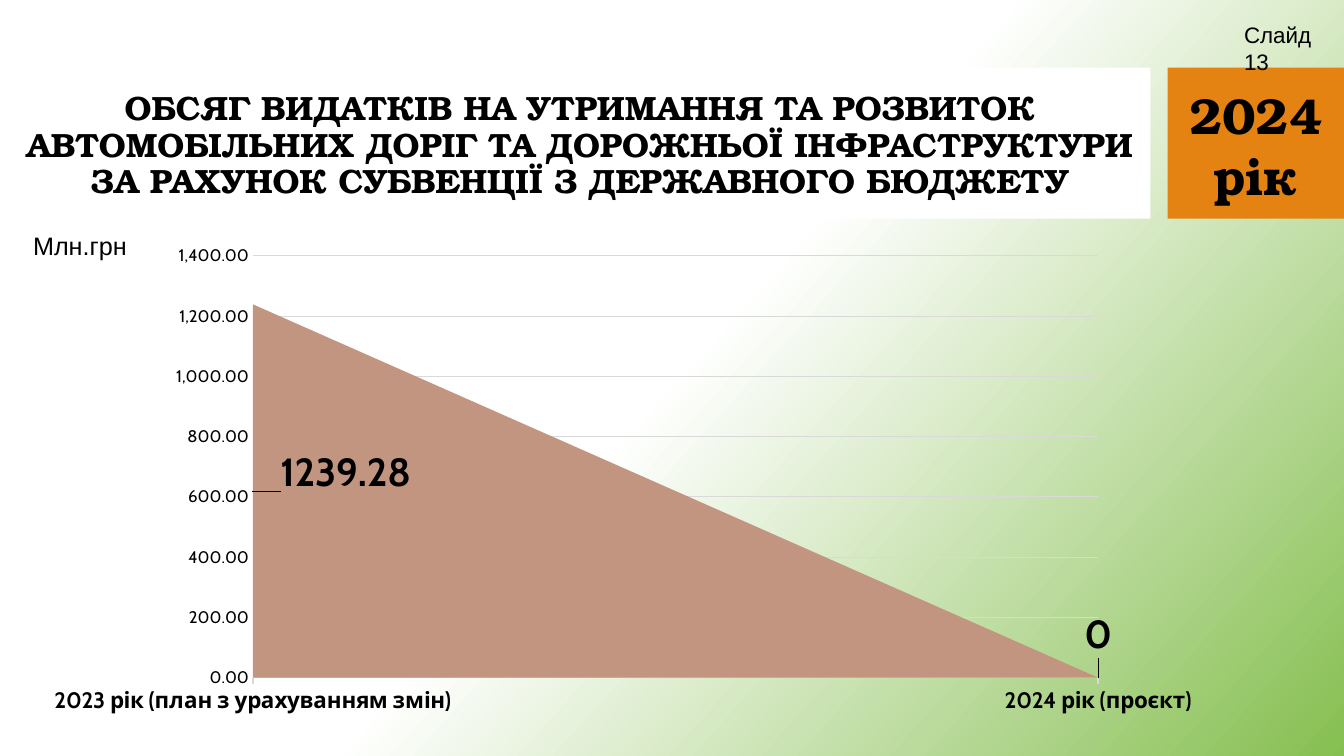
from lxml import etree
from pptx import Presentation
from pptx.chart.data import CategoryChartData
from pptx.dml.color import RGBColor
from pptx.enum.chart import XL_CHART_TYPE as CHART, XL_TICK_MARK as TICK
from pptx.enum.shapes import MSO_SHAPE as SHAPE
from pptx.enum.text import MSO_ANCHOR as ANCHOR, PP_ALIGN as ALIGN
from pptx.oxml.ns import qn
from pptx.util import Emu, Pt

PX = 9144  # EMU per px, 100 px to the inch
WHITE = RGBColor(0xFF, 0xFF, 0xFF)
BLACK = RGBColor(0, 0, 0)
GREEN = RGBColor(0x86, 0xBF, 0x51)
ORANGE = RGBColor(0xE4, 0x83, 0x12)
CLAY = RGBColor(0xC2, 0x95, 0x80)
GRID = RGBColor(0xD9, 0xD9, 0xD9)
BODY, DISPLAY, CHART_FONT = "Arial", "TeX Gyre Bonum", "Cabin"


def px(*lengths):
    return [Emu(n * PX) for n in lengths]


def style_font(font, size, name, bold=False):
    font.size, font.name, font.bold = Pt(size), name, bold
    font.color.rgb = BLACK


def style_line(line, width):
    line.color.rgb = GRID
    line.width = Pt(width)


def manual_layout(**settings):
    """Return a c:layout element holding the given manual settings in order."""
    layout = etree.Element(qn("c:layout"))
    manual = etree.SubElement(layout, qn("c:manualLayout"))
    for tag, value in settings.items():
        etree.SubElement(manual, qn(f"c:{tag}")).set("val", str(value))
    return layout


class SlideBuilder:
    def __init__(self, slide):
        self.s = slide

    def background(self):
        fill = self.s.background.fill
        fill.gradient()
        fill.gradient_angle = 360 - 42
        for stop, position, color in zip(fill.gradient_stops, (0.5, 1), (WHITE, GREEN)):
            stop.position = position
            stop.color.rgb = color

    def block(self, x, y, w, h, color):
        sp = self.s.shapes.add_shape(SHAPE.RECTANGLE, *px(x, y, w, h))
        sp.shadow.inherit = False
        sp.fill.solid()
        sp.fill.fore_color.rgb = color
        sp.line.fill.background()

    def text(self, x, y, w, h, lines, size, font=BODY, bold=False, outline=None,
             align=ALIGN.LEFT, anchor=ANCHOR.TOP, spacing=1.0):
        """Add one paragraph per line; outline is the width of a white letter edge."""
        tf = self.s.shapes.add_textbox(*px(x, y, w, h)).text_frame
        tf.word_wrap = True
        tf.vertical_anchor = anchor
        for i, line in enumerate(lines):
            p = tf.add_paragraph() if i else tf.paragraphs[0]
            p.alignment, p.line_spacing = align, spacing
            r = p.add_run()
            r.text = line
            style_font(r.font, size, font, bold)
            if outline:
                self.outline(r, outline)

    def outline(self, run, width):
        ln = etree.Element(qn("a:ln"), w=str(Pt(width)))
        fill = etree.SubElement(ln, qn("a:solidFill"))
        etree.SubElement(fill, qn("a:srgbClr")).set("val", str(WHITE))
        run.font._element.insert(0, ln)

    def area_chart(self, x, y, w, h, categories, values, plot, label_shifts):
        """plot is the inner plot box, label_shifts the label offsets, as chart fractions."""
        data = CategoryChartData()
        data.categories = categories
        data.add_series("Series 1", values)
        chart = self.s.shapes.add_chart(CHART.AREA, *px(x, y, w, h), data).chart
        chart.has_title = chart.has_legend = False
        style_font(chart.font, 10, CHART_FONT)

        cat = chart.category_axis
        cat.has_major_gridlines = False
        cat.major_tick_mark, cat.minor_tick_mark = TICK.OUTSIDE, TICK.NONE
        style_font(cat.tick_labels.font, 16, CHART_FONT, True)
        style_line(cat.format.line, 1)

        val = chart.value_axis
        val.minimum_scale, val.maximum_scale, val.major_unit = 0, 1400, 200
        val.major_tick_mark = val.minor_tick_mark = TICK.NONE
        val.tick_labels.number_format = "#,##0.00"
        val.tick_labels.number_format_is_linked = False
        style_font(val.tick_labels.font, 12, CHART_FONT)
        val.format.line.fill.background()
        val.has_major_gridlines = True
        style_line(val.major_gridlines.format.line, 0.75)

        series = chart.plots[0].series[0]
        series.format.fill.solid()
        series.format.fill.fore_color.rgb = CLAY
        series.format.line.fill.background()
        for i in range(len(values)):
            style_font(series.points[i].data_label.font, 28, CHART_FONT, True)
        labels = series._element.iter(qn("c:dLbl"))
        for label, (dx, dy) in zip(list(labels), label_shifts):
            label.find(qn("c:idx")).addnext(manual_layout(x=dx, y=dy))

        area = chart._chartSpace.chart.plotArea
        for old in area.findall(qn("c:layout")):
            area.remove(old)
        left, top, width, height = plot
        area.insert(0, manual_layout(layoutTarget="inner", xMode="edge", yMode="edge",
                                     x=left, y=top, w=width, h=height))
        for cross in area.iter(qn("c:crossBetween")):
            cross.set("val", "midCat")


def main():
    prs = Presentation()
    prs.slide_width, prs.slide_height = px(1333, 750)
    b = SlideBuilder(prs.slides.add_slide(prs.slide_layouts[6]))
    b.background()
    b.block(0, 67, 1141, 150, WHITE)
    b.block(1158, 67, 175, 150, ORANGE)
    b.text(0, 69, 1150, 152,
           ["ОБСЯГ ВИДАТКІВ НА УТРИМАННЯ ТА РОЗВИТОК АВТОМОБІЛЬНИХ ДОРІГ ТА ДОРОЖНЬОЇ "
            "ІНФРАСТРУКТУРИ ЗА РАХУНОК СУБВЕНЦІЇ З ДЕРЖАВНОГО БЮДЖЕТУ"],
           24, DISPLAY, True, 1.25, ALIGN.CENTER, ANCHOR.MIDDLE, 0.9)
    b.area_chart(54, 244, 1150, 476,
                 ["2023 рік (план з урахуванням змін)", "2024 рік (проєкт)"], [1239.28, 0],
                 plot=(0.17, 0.02, 0.73, 0.88), label_shifts=[(0.08, -0.04), (0, -0.09)])
    b.text(23, 224, 121, 40, ["Млн.грн"], 18)
    b.text(1224, 16, 98, 37, ["Слайд 13"], 16)
    b.text(1168, 78, 155, 131, ["2024", "рік"], 36, DISPLAY, True, 0.75,
           ALIGN.CENTER, ANCHOR.MIDDLE)
    prs.save("out.pptx")


if __name__ == "__main__":
    main()
